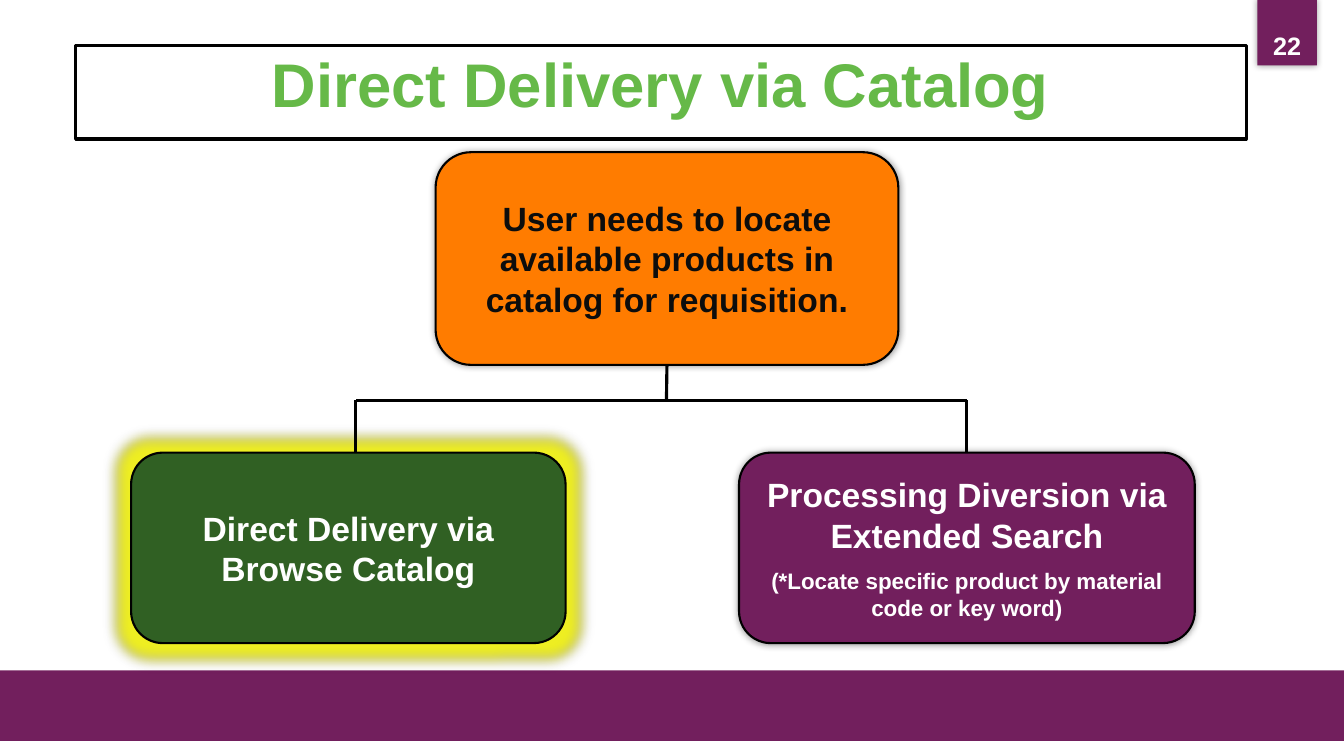
import pptx
import pptx.dml.color
import pptx.enum.shapes
import pptx.enum.text
import pptx.oxml
import pptx.oxml.ns
import pptx.util

RGBColor = pptx.dml.color.RGBColor
MSO_SHAPE = pptx.enum.shapes.MSO_SHAPE
PP_ALIGN = pptx.enum.text.PP_ALIGN
MSO_ANCHOR = pptx.enum.text.MSO_ANCHOR
Pt = pptx.util.Pt

PX = 9144
BLACK = RGBColor(0x00, 0x00, 0x00)
INK = RGBColor(0x0D, 0x0D, 0x0D)
WHITE = RGBColor(0xFF, 0xFF, 0xFF)
PURPLE = RGBColor(0x72, 0x1F, 0x5D)
ORANGE = RGBColor(0xFF, 0x7C, 0x00)
GREEN = RGBColor(0x30, 0x60, 0x23)
LIME = RGBColor(0x66, 0xB9, 0x48)
YELLOW = RGBColor(0xEE, 0xEE, 0x22)


def px(n):
    return pptx.util.Emu(n * PX)


def add_effects(sp, shadow=True, glow=None):
    xml = f'<a:effectLst {pptx.oxml.ns.nsdecls("a")}>'
    if glow is not None:
        xml += f'<a:glow rad="{Pt(18)}"><a:srgbClr val="{glow}"/></a:glow>'
    if shadow:
        xml += (f'<a:outerShdw blurRad="{Pt(5)}" dist="0" dir="0">'
                '<a:srgbClr val="000000"><a:alpha val="40000"/></a:srgbClr></a:outerShdw>')
    sp._element.spPr.append(pptx.oxml.parse_xml(xml + '</a:effectLst>'))


def add_box(slide, x, y, w, h, kind=MSO_SHAPE.RECTANGLE, fill=None, line=None,
            shadow=False, glow=None, anchor=MSO_ANCHOR.MIDDLE):
    sp = slide.shapes.add_shape(kind, px(x), px(y), px(w), px(h))
    if fill is None:
        sp.fill.background()
    else:
        sp.fill.solid()
        sp.fill.fore_color.rgb = fill
    if line is None:
        sp.line.fill.background()
    else:
        sp.line.color.rgb = BLACK
        sp.line.width = Pt(line)
    add_effects(sp, shadow, glow)
    sp.text_frame.word_wrap = True
    sp.text_frame.vertical_anchor = anchor
    return sp


def add_text(sp, text, size=24, color=WHITE, before=0, spacing=None):
    tf = sp.text_frame
    p = tf.add_paragraph() if tf.text else tf.paragraphs[0]
    p.alignment = PP_ALIGN.CENTER
    if before:
        p.space_before = Pt(before)
    if spacing:
        p.line_spacing = spacing
    r = p.add_run()
    r.text = text
    r.font.name = "Arial"
    r.font.size = Pt(size)
    r.font.bold = True
    r.font.color.rgb = color


def add_card(slide, x, y, w, h, fill, glow=None):
    return add_box(slide, x, y, w, h, MSO_SHAPE.ROUNDED_RECTANGLE, fill,
                   line=1.5, shadow=True, glow=glow)


def add_line(slide, x1, y1, x2, y2):
    c = slide.shapes.add_connector(pptx.enum.shapes.MSO_CONNECTOR.STRAIGHT,
                                   px(x1), px(y1), px(x2), px(y2))
    c.line.color.rgb = BLACK
    c.line.width = Pt(2.25)
    add_effects(c, shadow=False)
    return c


def main():
    prs = pptx.Presentation()
    prs.slide_width, prs.slide_height = px(1333), px(750)
    slide = prs.slides.add_slide(prs.slide_layouts[6])

    title = add_box(slide, 75, 45, 1161, 93, line=2.25, anchor=MSO_ANCHOR.TOP)
    title.text_frame.margin_top = px(9)
    add_text(title, "Direct Delivery via Catalog", size=44, color=LIME, spacing=0.9)

    number = add_box(slide, 1247, 0, 59, 65, fill=PURPLE, shadow=True,
                     anchor=MSO_ANCHOR.BOTTOM)
    add_text(number, "22", size=18)
    add_box(slide, 0, 665, 1333, 70, fill=PURPLE)

    need = add_card(slide, 432, 151, 459, 211, ORANGE)
    add_text(need, "User needs to locate available products in catalog for requisition.",
             color=INK)
    browse = add_card(slide, 130, 449, 431, 189, GREEN, glow=YELLOW)
    add_text(browse, "Direct Delivery via Browse Catalog")
    search = add_card(slide, 733, 449, 452, 189, PURPLE)
    add_text(search, "Processing Diversion via Extended Search")
    add_text(search, "(*Locate specific product by material code or key word)",
             size=16, before=9)

    bar_y, left_x, mid_x, right_x = 397, 353, 661, 959
    add_line(slide, mid_x, bar_y, left_x, bar_y)
    add_line(slide, right_x, bar_y, mid_x, bar_y)
    add_line(slide, mid_x, 362, mid_x, bar_y).begin_connect(need, 2)
    add_line(slide, left_x, 449, left_x, bar_y)
    add_line(slide, right_x, 449, right_x, bar_y).begin_connect(search, 0)

    prs.save("out.pptx")


if __name__ == "__main__":
    main()
